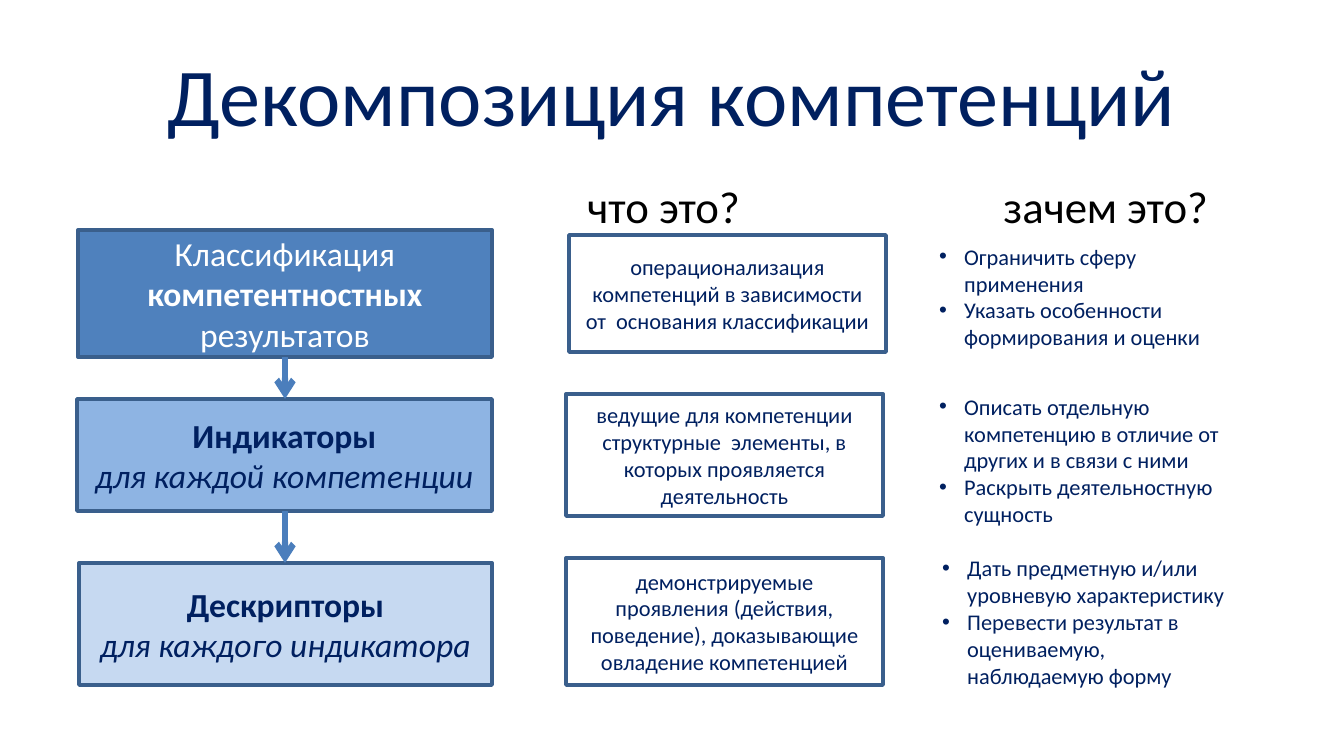
"""Build a slide that breaks competences down into indicators and descriptors."""
from itertools import pairwise

from pptx import Presentation
from pptx import util as u
from pptx.dml.color import RGBColor
from pptx.enum import shapes, text
from pptx.oxml.ns import qn
from lxml import etree

TITLE = "Декомпозиция компетенций"
HEADINGS = [((574, 172, 317, 60), "что это?"), ((990, 172, 287, 60), "зачем это?")]
PLAIN, BOLD, ITALIC = {}, {"bold": True}, {"italic": True}

LEVELS = [
    {"box": (78, 230, 414, 127), "fill": "strong", "color": "light", "paragraphs": [
        [("Классификация ", PLAIN), ("компетентностных ", BOLD), ("результатов", PLAIN)]]},
    {"box": (77, 399, 415, 112), "fill": "medium", "color": "dark", "paragraphs": [
        [("Индикаторы", BOLD)], [("для каждой компетенции", ITALIC)]]},
    {"box": (79, 563, 413, 122), "fill": "soft", "color": "dark", "paragraphs": [
        [("Дескрипторы", BOLD)], [("для каждого индикатора", ITALIC)]]},
]
MEANINGS = [
    ((569, 235, 317, 117),
     "операционализация компетенций в зависимости от  основания классификации"),
    ((566, 394, 317, 122),
     "ведущие для компетенции структурные  элементы, в которых проявляется деятельность"),
    ((566, 558, 317, 127),
     "демонстрируемые проявления (действия, поведение), доказывающие овладение компетенцией"),
]
PURPOSES = [
    ((926, 238, 317, 117), ["Ограничить сферу применения",
                            "Указать особенности формирования и оценки"]),
    ((926, 394, 317, 132), ["Описать отдельную компетенцию в отличие от других и в связи с ними",
                            "Раскрыть деятельностную сущность"]),
    ((929, 558, 317, 127), ["Дать предметную и/или уровневую характеристику",
                            "Перевести результат в оцениваемую, наблюдаемую форму"]),
]

THEME = {
    "font": "Calibri",
    "colors": {"dark": "002060", "black": "000000", "light": "FFFFFF", "strong": "4F81BD",
               "medium": "8EB4E3", "soft": "C6D9F1", "border": "3A5F8C", "arrow": "4B7EBC"},
    "sizes": {"title": 44, "heading": 24, "level": 18, "detail": 12},
    "lines": {"border": 2, "arrow": 3.25},
}
SLIDE_SIZE = (1344, 756)
TITLE_BOX = (67, 31, 1210, 126)
BULLET_INDENT = 25
ARROW_CENTER = 285


def px(length):
    return round(length * 914400 / 134.4)


def color(name):
    return RGBColor.from_string(THEME["colors"][name])


def apply(target, values):
    for name, value in values.items():
        setattr(target, name, value)


def add_run(paragraph, wording, size, color_name, style=PLAIN):
    run = paragraph.add_run()
    run.text = wording
    apply(run.font, {"name": THEME["font"], "size": u.Pt(THEME["sizes"][size]),
                     "bold": False, "italic": False, **style})
    run.font.color.rgb = color(color_name)


def outline(line, name):
    line.color.rgb = color(name)
    line.width = u.Pt(THEME["lines"][name])


def set_bullet(paragraph, indent, character=None):
    properties = paragraph._p.get_or_add_pPr()
    properties.set("marL", str(px(indent)))
    properties.set("indent", str(-px(indent)))
    if character:
        etree.SubElement(properties, qn("a:buFont"), typeface="Arial")
        etree.SubElement(properties, qn("a:buChar"), char=character)
    else:
        etree.SubElement(properties, qn("a:buNone"))


def add_box(slide, box, fill, paragraphs, size, color_name, border=True, bullets=False):
    shape = slide.shapes.add_shape(shapes.MSO_SHAPE.FLOWCHART_PROCESS, *map(px, box))
    shape.shadow.inherit = False
    shape.fill.solid()
    shape.fill.fore_color.rgb = color(fill)
    if border:
        outline(shape.line, "border")
    else:
        shape.line.fill.background()
    frame = shape.text_frame
    apply(frame, {"word_wrap": True, "vertical_anchor": text.MSO_ANCHOR.MIDDLE})
    for index, runs in enumerate(paragraphs):
        paragraph = frame.add_paragraph() if index else frame.paragraphs[0]
        paragraph.alignment = text.PP_ALIGN.LEFT if bullets else text.PP_ALIGN.CENTER
        if bullets:
            set_bullet(paragraph, BULLET_INDENT, "•")
        for wording, style in runs:
            add_run(paragraph, wording, size, color_name, style)
    return shape


def add_arrow(slide, upper, lower):
    center = px(ARROW_CENTER)
    arrow = slide.shapes.add_connector(
        shapes.MSO_CONNECTOR.STRAIGHT, center, upper.top + upper.height, center, lower.top)
    outline(arrow.line, "arrow")
    etree.SubElement(arrow.line._get_or_add_ln(), qn("a:tailEnd"), type="arrow")
    etree.SubElement(arrow._element.spPr, qn("a:effectLst"))


def fill_placeholder(shape, box, wording, size, color_name, anchor, alignment):
    apply(shape, dict(zip(("left", "top", "width", "height"), map(px, box))))
    apply(shape.text_frame, {"vertical_anchor": anchor, "word_wrap": True,
                             "auto_size": text.MSO_AUTO_SIZE.NONE})
    paragraph = shape.text_frame.paragraphs[0]
    apply(paragraph, {"alignment": alignment, "space_before": u.Pt(0)})
    set_bullet(paragraph, 0)
    add_run(paragraph, wording, size, color_name)


def main():
    presentation = Presentation()
    apply(presentation, dict(zip(("slide_width", "slide_height"), map(px, SLIDE_SIZE))))
    slide = presentation.slides.add_slide(presentation.slide_layouts[3])
    fill_placeholder(slide.shapes.title, TITLE_BOX, TITLE, "title", "dark",
                     text.MSO_ANCHOR.MIDDLE, text.PP_ALIGN.CENTER)
    for index, (box, heading) in enumerate(HEADINGS, start=1):
        fill_placeholder(slide.placeholders[index], box, heading, "heading", "black",
                         text.MSO_ANCHOR.TOP, text.PP_ALIGN.LEFT)

    levels = [add_box(slide, level["box"], level["fill"], level["paragraphs"],
                      "level", level["color"]) for level in LEVELS]
    for upper, lower in pairwise(levels):
        add_arrow(slide, upper, lower)
    for box, meaning in MEANINGS:
        add_box(slide, box, "light", [[(meaning, PLAIN)]], "detail", "dark")
    for box, purposes in PURPOSES:
        add_box(slide, box, "light", [[(purpose, PLAIN)] for purpose in purposes],
                "detail", "dark", border=False, bullets=True)
    presentation.save("out.pptx")


if __name__ == "__main__":
    main()
